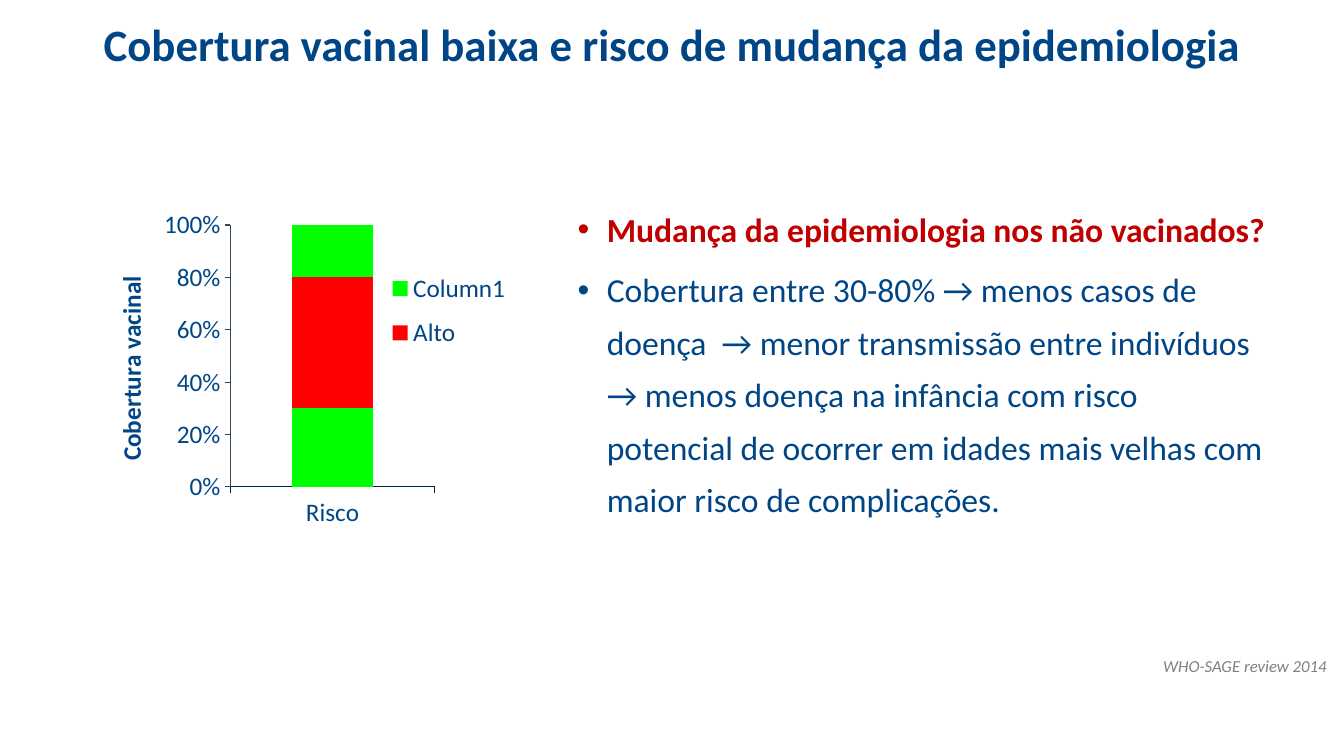
from lxml import etree
from pptx import Presentation
from pptx.chart.data import CategoryChartData
from pptx.dml.color import RGBColor
from pptx.enum.chart import XL_CHART_TYPE, XL_LEGEND_POSITION, XL_TICK_MARK
from pptx.enum.text import MSO_ANCHOR, PP_ALIGN
from pptx.oxml import parse_xml
from pptx.oxml.ns import nsdecls, qn
from pptx.util import Inches, Pt

FONT = "Calibri"
COLORS = {
    "blue": "004586", "dark_red": "C00000", "gray": "808080",
    "low_risk": "00FF00", "high_risk": "FF0000",
    "category_line": "002243", "value_line": "2B4A5E",
}

TITLE = "Cobertura vacinal baixa e risco de mudança da epidemiologia"
# text, colour, bold, line spacing
BULLETS = [
    ("Mudança da epidemiologia nos não vacinados?", "dark_red", True, 1.0),
    ("Cobertura entre 30-80% → menos casos de doença  → menor transmissão "
     "entre indivíduos → menos doença na infância com risco potencial de "
     "ocorrer em idades mais velhas com maior risco de complicações.",
     "blue", False, 1.3),
]
SOURCE = "WHO-SAGE review 2014"
AXIS_TITLE = "Cobertura vacinal"
CATEGORIES = ["Risco"]
COVERAGE = [
    ("Series 1", 30, "low_risk"),
    ("Alto ", 50, "high_risk"),
    ("Column1", 20, "low_risk"),
]
# x, y, width, height as shares of the chart
PLOT_LAYOUT = (0.29, 0.065, 0.43, 0.795)
LEGEND_LAYOUT = (0.62, 0.17, 0.26, 0.31)


def rgb(name):
    return RGBColor.from_string(COLORS[name])


def style(font, size, color, bold=False, italic=False):
    font.name, font.size = FONT, Pt(size)
    font.bold, font.italic = bold, italic
    font.color.rgb = rgb(color)


def add_text(slide, left, top, width, height):
    frame = slide.shapes.add_textbox(
        Inches(left), Inches(top), Inches(width), Inches(height)).text_frame
    frame.word_wrap = True
    return frame


def add_bullet(paragraph):
    properties = paragraph._p.get_or_add_pPr()
    properties.set("marL", str(Inches(0.29)))
    properties.set("indent", str(-Inches(0.29)))
    etree.SubElement(properties, qn("a:buFont")).set("typeface", "Arial")
    etree.SubElement(properties, qn("a:buChar")).set("char", "•")


def manual_layout(shares, inner=False):
    target = '<c:layoutTarget val="inner"/>' if inner else ""
    modes = '<c:xMode val="edge"/><c:yMode val="edge"/>'
    sizes = "".join(f'<c:{tag} val="{share}"/>' for tag, share in zip("xywh", shares))
    return parse_xml(f'<c:layout {nsdecls("c")}><c:manualLayout>'
                     f'{target}{modes}{sizes}</c:manualLayout></c:layout>')


def add_coverage_chart(slide):
    data = CategoryChartData()
    data.categories = CATEGORIES
    for name, share, _ in COVERAGE:
        data.add_series(name, [share])
    chart = slide.shapes.add_chart(
        XL_CHART_TYPE.COLUMN_STACKED_100, Inches(0.92), Inches(2.02),
        Inches(4.71), Inches(3.27), data).chart
    style(chart.font, 18, "blue")
    chart.has_title = False

    plot = chart.plots[0]
    plot.gap_width, plot.overlap = 150, 100
    plot.vary_by_categories = False
    for series, (_, _, color) in zip(plot.series, COVERAGE):
        series.format.fill.solid()
        series.format.fill.fore_color.rgb = rgb(color)

    for axis, color in ((chart.category_axis, "category_line"),
                        (chart.value_axis, "value_line")):
        axis.has_major_gridlines = False
        axis.major_tick_mark = XL_TICK_MARK.OUTSIDE
        axis.minor_tick_mark = XL_TICK_MARK.NONE
        axis.format.line.color.rgb = rgb(color)
        axis.format.line.width = Pt(0.75)
    values = chart.value_axis
    values.major_unit = 0.2
    values.tick_labels.number_format = "0%"
    values.tick_labels.number_format_is_linked = False
    axis_title = values.axis_title.text_frame
    axis_title.text = AXIS_TITLE
    style(axis_title.paragraphs[0].font, 18, "blue", bold=True)

    chart.has_legend = True
    legend = chart.legend
    legend.position = XL_LEGEND_POSITION.RIGHT
    legend.include_in_layout = False
    style(legend.font, 18, "blue")
    hidden_entry = parse_xml(f'<c:legendEntry {nsdecls("c")}><c:idx val="0"/>'
                             '<c:delete val="1"/></c:legendEntry>')
    position = legend._element.find(qn("c:legendPos"))
    for old in legend._element.findall(qn("c:layout")):
        legend._element.remove(old)
    position.addnext(hidden_entry)
    hidden_entry.addnext(manual_layout(LEGEND_LAYOUT))

    plot_area = chart._chartSpace.chart.plotArea
    for old in plot_area.findall(qn("c:layout")):
        plot_area.remove(old)
    plot_area.insert(0, manual_layout(PLOT_LAYOUT, inner=True))


def main():
    deck = Presentation()
    deck.slide_width, deck.slide_height = Inches(13.33), Inches(7.5)
    slide = deck.slides.add_slide(deck.slide_layouts[5])

    title = slide.shapes.title
    title.left, title.top = Inches(0.67), Inches(0.1)
    title.width, title.height = Inches(12), Inches(0.66)
    title.text_frame.text = TITLE
    title.text_frame.vertical_anchor = MSO_ANCHOR.MIDDLE
    heading = title.text_frame.paragraphs[0]
    heading.alignment = PP_ALIGN.CENTER
    style(heading.font, 32, "blue", bold=True)

    source = add_text(slide, 0.59, 6.46, 12.67, 0.32).paragraphs[0]
    source.text = SOURCE
    source.alignment = PP_ALIGN.RIGHT
    style(source.font, 12, "gray", italic=True)

    body = add_text(slide, 5.63, 2.02, 7.02, 4.17)
    for number, (text, color, bold, spacing) in enumerate(BULLETS):
        paragraph = body.add_paragraph() if number else body.paragraphs[0]
        paragraph.text = text
        add_bullet(paragraph)
        paragraph.line_spacing = spacing
        if number:
            paragraph.space_before = Pt(6)
        style(paragraph.font, 24, color, bold=bold)

    add_coverage_chart(slide)
    deck.save("out.pptx")


if __name__ == "__main__":
    main()
